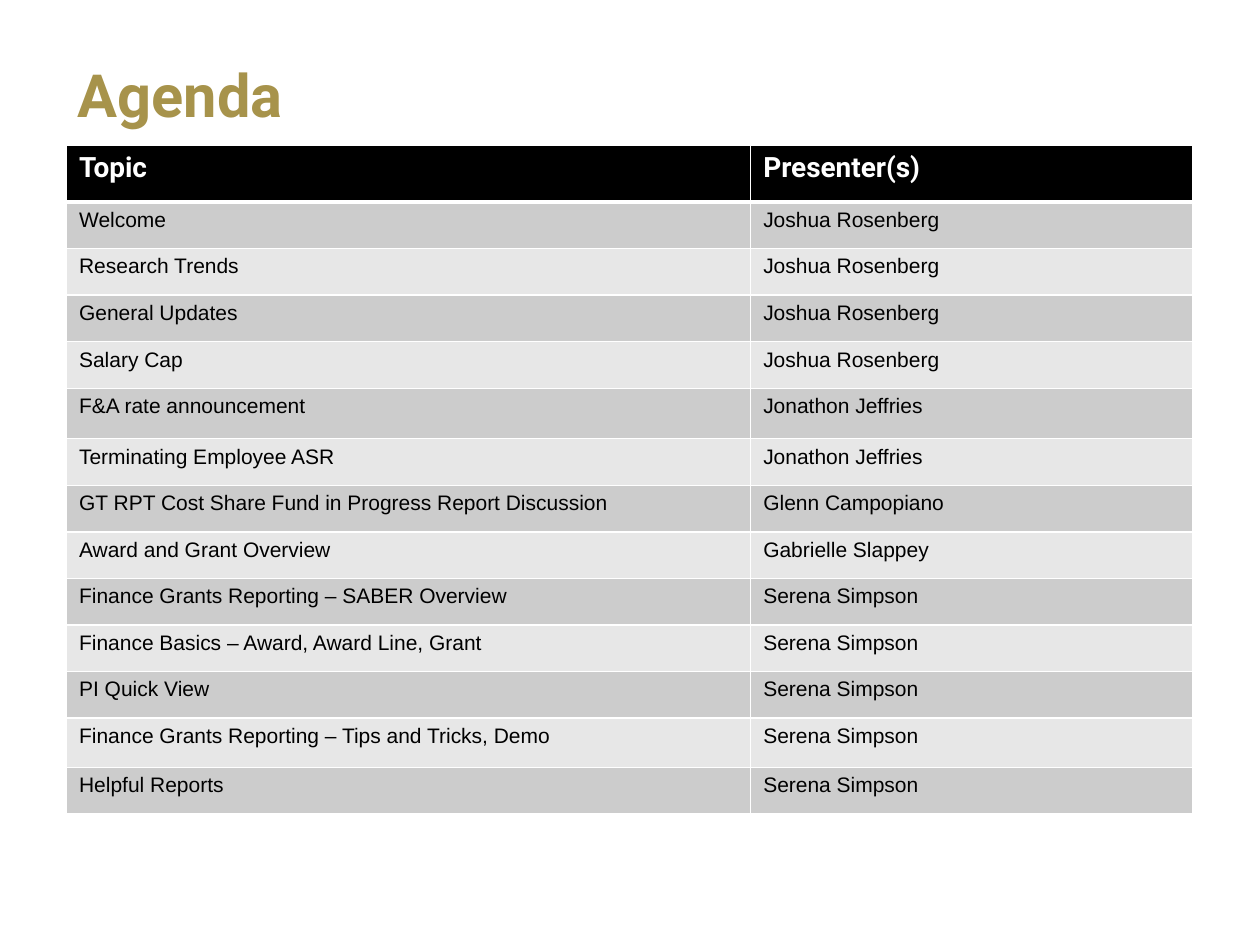
"""Build an agenda slide with a table of topics and presenters."""
from dataclasses import dataclass

from pptx import Presentation
from pptx import util as u
from pptx.dml import color
from pptx.enum import text
from pptx.oxml import ns
from lxml import etree

Pt = u.Pt


@dataclass(frozen=True)
class Style:
    font: str
    size: float
    ink: str
    bold: bool = False


@dataclass(frozen=True)
class Item:
    topic: str
    presenter: str
    height: float = 26.64


TITLE = Style("Roboto", 34, "A7934B", True)
HEADING = Style("Roboto", 16, "FFFFFF", True)
BODY = Style("Arial", 12, "000000")
BANDS = ("E7E7E7", "CCCCCC")
COLUMN_WIDTHS = (390.96, 252.72)
THIN, THICK = 1, 3

ITEMS = (
    Item("Topic", "Presenter(s)", 32.4),
    Item("Welcome", "Joshua Rosenberg"),
    Item("Research Trends", "Joshua Rosenberg"),
    Item("General Updates", "Joshua Rosenberg"),
    Item("Salary Cap", "Joshua Rosenberg"),
    Item("F&A rate announcement", "Jonathon Jeffries", 28.8),
    Item("Terminating Employee ASR", "Jonathon Jeffries"),
    Item("GT RPT Cost Share Fund in Progress Report Discussion", "Glenn Campopiano"),
    Item("Award and Grant Overview", "Gabrielle Slappey"),
    Item("Finance Grants Reporting – SABER Overview", "Serena Simpson"),
    Item("Finance Basics – Award, Award Line, Grant", "Serena Simpson"),
    Item("PI Quick View", "Serena Simpson"),
    Item("Finance Grants Reporting – Tips and Tricks, Demo", "Serena Simpson", 28.08),
    Item("Helpful Reports", "Serena Simpson"),
)


def rgb(value: str) -> color.RGBColor:
    return color.RGBColor.from_string(value)


def write(frame, words: str, style: Style) -> None:
    frame.text = words
    for span in frame.paragraphs[0].runs:
        span.font.name = style.font
        span.font.size = Pt(style.size)
        span.font.bold = style.bold
        span.font.color.rgb = rgb(style.ink)


def add_borders(cell, top: float, bottom: float) -> None:
    properties = cell._tc.get_or_add_tcPr()
    for side, width in (("L", THIN), ("R", THIN), ("T", top), ("B", bottom)):
        line = etree.SubElement(properties, ns.qn(f"a:ln{side}"), w=str(Pt(width)))
        fill = etree.SubElement(line, ns.qn("a:solidFill"))
        etree.SubElement(fill, ns.qn("a:srgbClr"), val="FFFFFF")


def add_title(page) -> None:
    box = page.shapes.add_textbox(Pt(37.44), Pt(6.48), Pt(580.32), Pt(99.36))
    frame = box.text_frame
    frame.word_wrap = True
    frame.vertical_anchor = text.MSO_ANCHOR.MIDDLE
    write(frame, "Agenda", TITLE)
    frame.paragraphs[0].line_spacing = 0.9


def add_agenda(page) -> None:
    height = sum(item.height for item in ITEMS)
    table = page.shapes.add_table(
        len(ITEMS), len(COLUMN_WIDTHS), Pt(38), Pt(83),
        Pt(sum(COLUMN_WIDTHS)), Pt(height)).table
    for column, width in zip(table.columns, COLUMN_WIDTHS):
        column.width = Pt(width)
    for index, item in enumerate(ITEMS):
        row = table.rows[index]
        row.height = Pt(item.height)
        for cell, words in zip(row.cells, (item.topic, item.presenter)):
            write(cell.text_frame, words, BODY if index else HEADING)
            add_borders(cell, THICK if index == 1 else THIN, THIN if index else THICK)
            cell.fill.solid()
            cell.fill.fore_color.rgb = rgb(BANDS[index % 2] if index else "000000")


def main() -> None:
    deck = Presentation()
    deck.slide_width, deck.slide_height = Pt(720), Pt(540)
    page = deck.slides.add_slide(deck.slide_layouts[6])
    add_title(page)
    add_agenda(page)
    deck.save("out.pptx")


if __name__ == "__main__":
    main()
